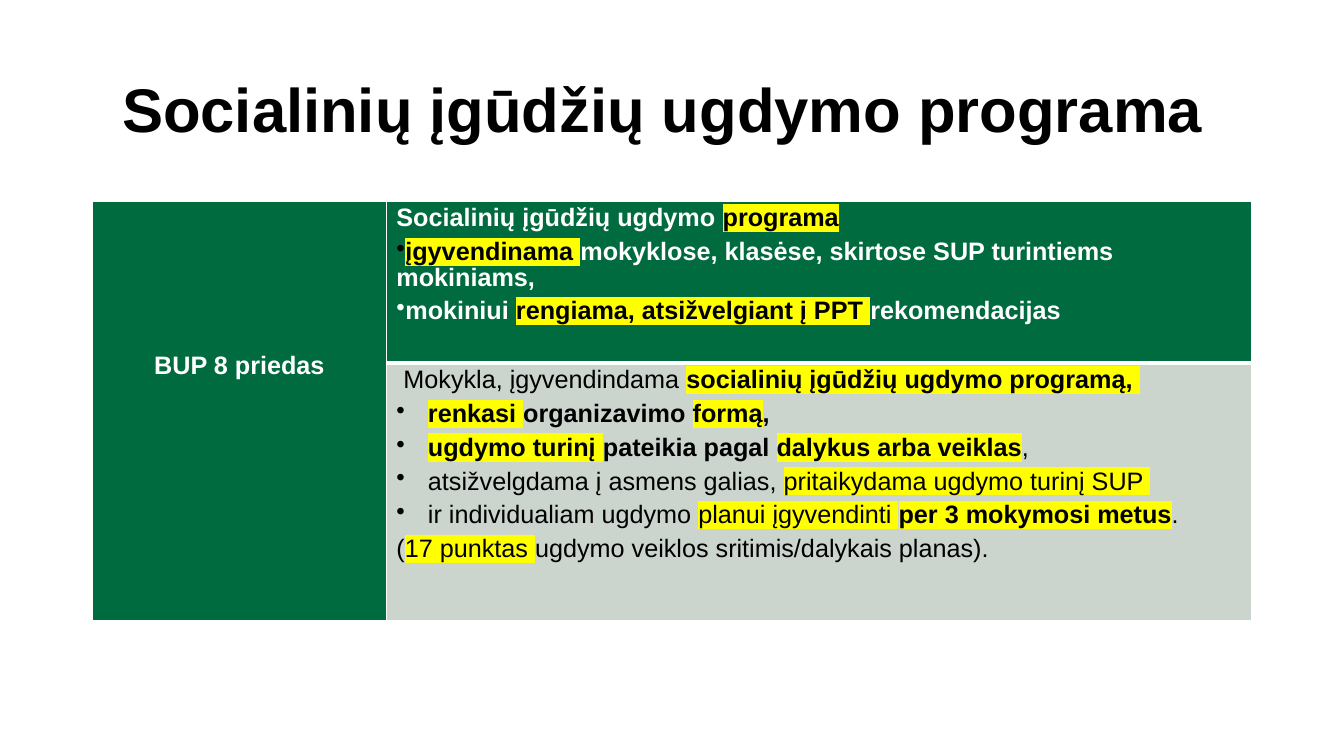
from lxml import etree
from pptx import Presentation
from pptx.dml.color import RGBColor
from pptx.enum.text import MSO_ANCHOR, PP_ALIGN
from pptx.oxml.ns import qn
from pptx.util import Pt

PX = 9525
BLACK = RGBColor(0x00, 0x00, 0x00)
WHITE = RGBColor(0xFF, 0xFF, 0xFF)
YELLOW = RGBColor(0xFF, 0xFF, 0x00)
GREEN = RGBColor(0x00, 0x6B, 0x3E)
GREY = RGBColor(0xCC, 0xD4, 0xCE)
CENTER = PP_ALIGN.CENTER
MIDDLE = MSO_ANCHOR.MIDDLE

TITLE = "Socialinių įgūdžių ugdymo programa "
SOURCE = "BUP 8 priedas"
# Each paragraph: has a bullet, then runs of (text, flags); b = bold, h = highlighted
PROGRAMME = [
    (False, [("Socialinių įgūdžių ugdymo ", "b"), ("programa", "bh")]),
    (True, [("įgyvendinama ", "bh"),
            ("mokyklose, klasėse, skirtose SUP turintiems mokiniams,", "b")]),
    (True, [("mokiniui ", "b"), ("rengiama, atsižvelgiant į PPT ", "bh"),
            ("rekomendacijas", "b")]),
]
SCHOOL = [
    (False, [(" Mokykla, įgyvendindama ", ""),
             ("socialinių įgūdžių ugdymo programą, ", "bh")]),
    (True, [("renkasi ", "bh"), ("organizavimo ", "b"), ("formą", "bh"), (",", "b")]),
    (True, [("ugdymo turinį ", "bh"), ("pateikia pagal ", "b"),
            ("dalykus arba veiklas", "bh"), (",", "")]),
    (True, [("atsižvelgdama į asmens galias, ", ""),
            ("pritaikydama ugdymo turinį SUP ", "h")]),
    (True, [("ir individualiam ugdymo ", ""), ("planui įgyvendinti ", "h"),
            ("per 3 mokymosi metus", "bh"), (".", "")]),
    (False, [("(", ""), ("17 punktas ", "h"),
             ("ugdymo veiklos sritimis/dalykais planas).", "")]),
]


def set_font(font, size, color, bold):
    font.name = "Arial"
    font.size = Pt(size)
    font.color.rgb = color
    font.bold = bold


def highlight(r):
    mark = etree.SubElement(r.font._element, qn("a:highlight"))
    etree.SubElement(mark, qn("a:srgbClr"), val=str(YELLOW))


def add_bullet(p, left, hanging):
    pPr = p._p.get_or_add_pPr()
    pPr.set("marL", str(left * PX))
    pPr.set("indent", str(-hanging * PX))
    bullet = etree.Element(qn("a:buChar"), char="•")
    pPr.find(qn("a:defRPr")).addprevious(bullet)


def style_cell(cell, fill, bottom=1):
    """Fill the cell and rule it in white; bottom is the lower rule in points."""
    cell.fill.solid()
    cell.fill.fore_color.rgb = fill
    tcPr = cell._tc.get_or_add_tcPr()
    for i, (side, width) in enumerate(zip("LRTB", (1, 1, 1, bottom))):
        ln = etree.Element(qn(f"a:ln{side}"), w=str(Pt(width)))
        solid = etree.SubElement(ln, qn("a:solidFill"))
        etree.SubElement(solid, qn("a:srgbClr"), val=str(WHITE))
        tcPr.insert(i, ln)


def write_paragraphs(cell, paragraphs, color, left, hanging):
    tf = cell.text_frame
    for i, (has_bullet, runs) in enumerate(paragraphs):
        p = tf.add_paragraph() if i else tf.paragraphs[0]
        p.line_spacing = 0.9
        p.space_after = Pt(6)
        p.font.name = "Arial"
        p.font.size = Pt(18)
        if has_bullet:
            add_bullet(p, left, hanging)
        for text, flags in runs:
            r = p.add_run()
            r.text = text
            r.font.bold = "b" in flags
            r.font.color.rgb = BLACK if "h" in flags else color
            if "h" in flags:
                highlight(r)


def add_title(s, x, y, w, h):
    tf = s.shapes.add_textbox(x * PX, y * PX, w * PX, h * PX).text_frame
    tf.word_wrap = True
    tf.vertical_anchor = MIDDLE
    p = tf.paragraphs[0]
    p.text = TITLE
    p.alignment = CENTER
    p.line_spacing = 0.9
    set_font(p.font, 44, BLACK, True)


def add_programme_table(s, x, y, w, h):
    source_w, programme_h = 280, 154
    table = s.shapes.add_table(2, 2, x * PX, y * PX, w * PX, h * PX).table
    table.first_row = table.horz_banding = False
    for column, width in zip(table.columns, (source_w, w - source_w)):
        column.width = width * PX
    for row, height in zip(table.rows, (programme_h, h - programme_h)):
        row.height = height * PX

    source = table.cell(0, 0)
    source.merge(table.cell(1, 0))
    style_cell(source, GREEN)
    source.margin_top = 143 * PX
    p = source.text_frame.paragraphs[0]
    p.text = SOURCE
    p.alignment = CENTER
    set_font(p.font, 18, WHITE, True)

    programme, school = table.cell(0, 1), table.cell(1, 1)
    style_cell(programme, GREEN, bottom=3)
    write_paragraphs(programme, PROGRAMME, WHITE, 0, 24)
    style_cell(school, GREY)
    write_paragraphs(school, SCHOOL, BLACK, 30, 30)


def main():
    prs = Presentation()
    prs.slide_width, prs.slide_height = 1280 * PX, 720 * PX
    s = prs.slides.add_slide(prs.slide_layouts[6])
    add_title(s, 88, 38, 1104, 139)
    add_programme_table(s, 88, 192, 1104, 399)
    prs.save("out.pptx")


if __name__ == "__main__":
    main()
